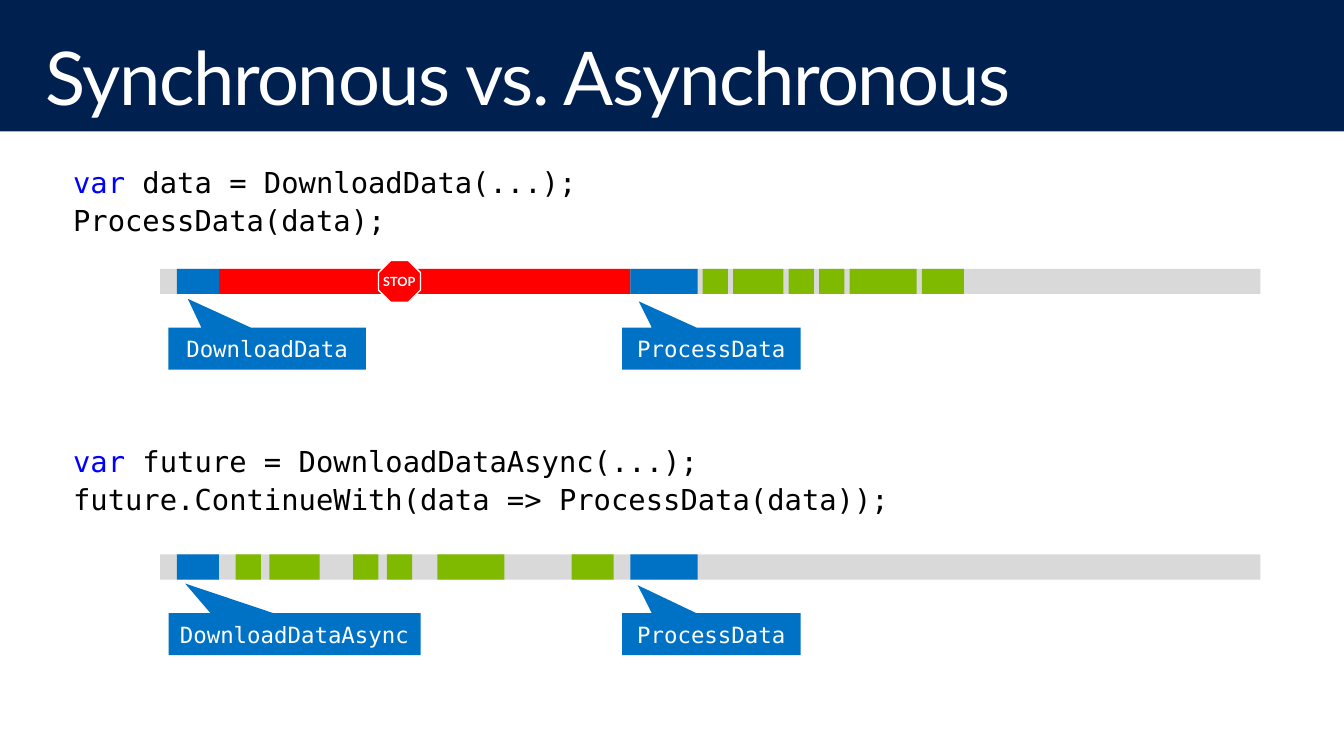
from dataclasses import dataclass

from pptx import Presentation
from pptx.dml.color import RGBColor
from pptx.enum.shapes import MSO_SHAPE
from pptx.enum.text import MSO_ANCHOR, PP_ALIGN
from pptx.util import Pt

RECTANGLE = MSO_SHAPE.RECTANGLE
OCTAGON = MSO_SHAPE.OCTAGON
CALLOUT = MSO_SHAPE.RECTANGULAR_CALLOUT
MIDDLE = MSO_ANCHOR.MIDDLE
CENTER = PP_ALIGN.CENTER

NAVY = RGBColor(0x00, 0x20, 0x50)
WHITE = RGBColor(0xFF, 0xFF, 0xFF)
BLACK = RGBColor(0x00, 0x00, 0x00)
KEYWORD_BLUE = RGBColor(0x00, 0x00, 0xFF)
GRAY = RGBColor(0xD9, 0xD9, 0xD9)
BLUE = RGBColor(0x00, 0x72, 0xC6)
RED = RGBColor(0xFF, 0x00, 0x00)
GREEN = RGBColor(0x7F, 0xBA, 0x00)

CODE_FONT = "DejaVu Sans Mono"
TITLE_FONT = "Lato"

PAGE_WIDTH, PAGE_HEIGHT = 979.2, 550.8
HEADER_HEIGHT = 95.76
SLOT = 6.12
TIMELINE_LEFT = 116.64
TIMELINE_SLOTS = 131
BAR_HEIGHT = 3 * SLOT
LABEL_DROP = 7 * SLOT
LABEL_HEIGHT = 5 * SLOT
STOP_START, STOP_SLOTS = 26, 5


@dataclass
class Segment:
    start: float
    slots: float
    color: RGBColor


@dataclass
class Label:
    text: str
    start: float
    slots: float
    tip: tuple[float, float]


@dataclass
class Scenario:
    code_top: float
    code: list[list[tuple[str, RGBColor]]]
    bar_top: float
    segments: list[Segment]
    labels: list[Label]


def packed_work(start: float, gap: float, lengths: list[int]) -> list[Segment]:
    segments = []
    for slots in lengths:
        segments.append(Segment(start, slots, GREEN))
        start += slots + gap
    return segments


DOWNLOAD = Segment(2, 5, BLUE)
WAIT = Segment(7, 49, RED)
PROCESS = Segment(56, 8, BLUE)

SYNCHRONOUS = Scenario(
    115.92,
    [
        [("var", KEYWORD_BLUE), (" data = DownloadData(...);", BLACK)],
        [("ProcessData(data);", BLACK)],
    ],
    195.84,
    [WAIT, DOWNLOAD, PROCESS, *packed_work(64.6, 0.62, [3, 6, 3, 3, 8, 5])],
    [
        Label("DownloadData", 1, 23.5, (-0.402, -1.185)),
        Label("ProcessData", 55, 21.25, (-0.406, -1.124)),
    ],
)
ASYNCHRONOUS = Scenario(
    318.96,
    [
        [("var", KEYWORD_BLUE), (" future = DownloadDataAsync(...);", BLACK)],
        [("future.ContinueWith(data => ProcessData(data));", BLACK)],
    ],
    403.92,
    [DOWNLOAD, PROCESS]
    + [
        Segment(start, slots, GREEN)
        for start, slots in [(9, 3), (13, 6), (23, 3), (27, 3), (33, 8), (49, 5)]
    ],
    [
        Label("DownloadDataAsync", 1, 30, (-0.434, -1.206)),
        Label("ProcessData", 55, 21.25, (-0.412, -1.165)),
    ],
)


def slot_left(start: float) -> float:
    return TIMELINE_LEFT + start * SLOT


def add_block(page, kind, left: float, top: float, width: float, height: float,
              color: RGBColor):
    block = page.shapes.add_shape(kind, Pt(left), Pt(top), Pt(width), Pt(height))
    block.shadow.inherit = False
    block.fill.solid()
    block.fill.fore_color.rgb = color
    block.line.fill.background()
    return block


def add_caption(block, text: str, font: str, size: float, bold: bool = False) -> None:
    block.text_frame.vertical_anchor = MIDDLE
    para = block.text_frame.paragraphs[0]
    para.text = text
    para.alignment = CENTER
    para.font.name = font
    para.font.size = Pt(size)
    para.font.bold = bold
    para.font.color.rgb = WHITE


def add_text_frame(page, left: float, top: float, width: float, height: float):
    box = page.shapes.add_textbox(Pt(left), Pt(top), Pt(width), Pt(height))
    frame = box.text_frame
    frame.word_wrap = True
    frame.margin_left = frame.margin_right = Pt(11.5)
    frame.margin_top = frame.margin_bottom = Pt(7.2)
    return frame


def add_title(page, text: str) -> None:
    para = add_text_frame(page, 21.6, 23.04, 936, 72).paragraphs[0]
    para.line_spacing = 0.9
    para.font.name = TITLE_FONT
    para.font.size = Pt(54)
    para.font.color.rgb = WHITE
    span = para.add_run()
    span.text = text
    span.font._element.set("spc", "-100")


def add_code(page, top: float, lines: list[list[tuple[str, RGBColor]]]) -> None:
    frame = add_text_frame(page, 41.76, top, 895, 65.5)
    for index, line in enumerate(lines):
        para = frame.add_paragraph() if index else frame.paragraphs[0]
        para.line_spacing = 0.9
        para.space_before = Pt(5)
        para.font.name = CODE_FONT
        para.font.size = Pt(21)
        for text, color in line:
            span = para.add_run()
            span.text = text
            span.font.color.rgb = color


def add_label(page, label: Label, bar_top: float) -> None:
    callout = add_block(page, CALLOUT, slot_left(label.start), bar_top + LABEL_DROP,
                        label.slots * SLOT, LABEL_HEIGHT, BLUE)
    callout.adjustments[0], callout.adjustments[1] = label.tip
    add_caption(callout, label.text, CODE_FONT, 16.3)


def add_stop_sign(page, bar_top: float) -> None:
    size = STOP_SLOTS * SLOT
    sign = add_block(page, OCTAGON, slot_left(STOP_START),
                     bar_top + (BAR_HEIGHT - size) / 2, size, size, RED)
    sign.line.color.rgb = WHITE
    sign.line.width = Pt(1)
    frame = sign.text_frame
    frame.word_wrap = False
    frame.margin_left = frame.margin_right = frame.margin_top = frame.margin_bottom = 0
    add_caption(sign, "STOP", TITLE_FONT, 9.2, bold=True)


def add_scenario(page, scenario: Scenario) -> None:
    add_code(page, scenario.code_top, scenario.code)
    for segment in [Segment(0, TIMELINE_SLOTS, GRAY), *scenario.segments]:
        add_block(page, RECTANGLE, slot_left(segment.start), scenario.bar_top,
                  segment.slots * SLOT, BAR_HEIGHT, segment.color)
    for label in scenario.labels:
        add_label(page, label, scenario.bar_top)


def main() -> None:
    deck = Presentation()
    deck.slide_width, deck.slide_height = Pt(PAGE_WIDTH), Pt(PAGE_HEIGHT)
    page = deck.slides.add_slide(deck.slide_layouts[6])
    page.background.fill.solid()
    page.background.fill.fore_color.rgb = NAVY
    add_block(page, RECTANGLE, 0, HEADER_HEIGHT, PAGE_WIDTH,
              PAGE_HEIGHT - HEADER_HEIGHT, WHITE)
    add_title(page, "Synchronous vs. Asynchronous")
    for scenario in (SYNCHRONOUS, ASYNCHRONOUS):
        add_scenario(page, scenario)
    add_stop_sign(page, SYNCHRONOUS.bar_top)
    deck.save("out.pptx")


if __name__ == "__main__":
    main()
